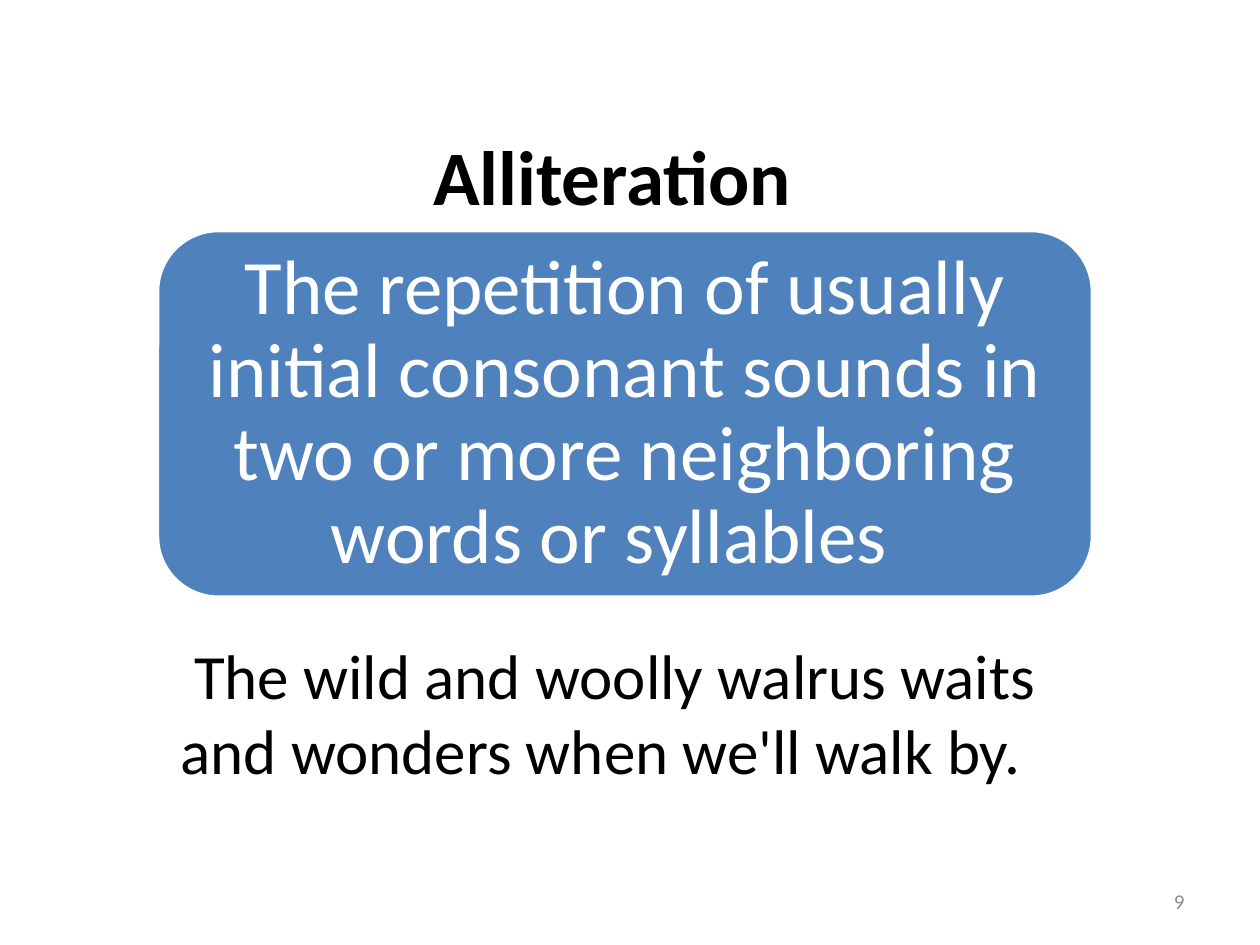
from pptx import Presentation
from pptx.dml.color import RGBColor
from pptx.enum.shapes import MSO_SHAPE
from pptx.enum.text import MSO_ANCHOR, PP_ALIGN
from pptx.util import Inches, Pt

BLACK = RGBColor(0x00, 0x00, 0x00)
WHITE = RGBColor(0xFF, 0xFF, 0xFF)
BLUE = RGBColor(0x4F, 0x81, 0xBD)
GRAY = RGBColor(0x8C, 0x8C, 0x8C)


class SlideBuilder:
    """Holds the style and the current slide."""

    font_name = "Calibri"

    def __init__(self, slide):
        self.slide = slide

    def add_runs(self, shape, runs, color, align, anchor, bold=False):
        """Fill a shape with one paragraph of (text, size) runs."""
        frame = shape.text_frame
        frame.word_wrap = True
        frame.vertical_anchor = anchor
        paragraph = frame.paragraphs[0]
        paragraph.alignment = align
        for text, size in runs:
            run = paragraph.add_run()
            run.text = text
            run.font.name = self.font_name
            run.font.size = Pt(size)
            run.font.bold = bold
            run.font.color.rgb = color
        return paragraph

    def text(self, left, top, width, height, text, size, color=BLACK,
             align=PP_ALIGN.CENTER, anchor=MSO_ANCHOR.MIDDLE, bold=False):
        box = self.slide.shapes.add_textbox(
            Inches(left), Inches(top), Inches(width), Inches(height))
        self.add_runs(box, [(text, size)], color, align, anchor, bold)

    def panel(self, left, top, width, height, runs):
        shape = self.slide.shapes.add_shape(
            MSO_SHAPE.ROUNDED_RECTANGLE,
            Inches(left), Inches(top), Inches(width), Inches(height))
        shape.shadow.inherit = False
        shape.fill.solid()
        shape.fill.fore_color.rgb = BLUE
        shape.line.color.rgb = WHITE
        shape.line.width = Pt(2)
        frame = shape.text_frame
        # The rounded corners already inset the text a little
        frame.margin_left = frame.margin_right = Inches(0.04)
        frame.margin_top = frame.margin_bottom = Inches(0.04)
        paragraph = self.add_runs(shape, runs, WHITE, PP_ALIGN.CENTER, MSO_ANCHOR.MIDDLE)
        paragraph.line_spacing = 0.9


def main():
    presentation = Presentation()
    presentation.slide_width = Inches(10)
    presentation.slide_height = Inches(7.5)
    builder = SlideBuilder(presentation.slides.add_slide(presentation.slide_layouts[6]))

    # Title
    builder.text(0.75, 0.58, 8.5, 1.61, "Alliteration  ", 44, bold=True)

    # Definition
    builder.panel(1.25, 1.83, 7.42, 2.91, [
        ("The repetition of usually initial consonant sounds in two or more "
         "neighboring words or syllables ", 44),
        (" ", 36),
    ])

    # Example
    builder.text(1.17, 5, 7.42, 1.31,
                 "The wild and woolly walrus waits and wonders when we'll walk by.  ",
                 36, anchor=MSO_ANCHOR.TOP)

    # Slide number
    builder.text(7.17, 6.95, 2.33, 0.4, "9", 12, color=GRAY, align=PP_ALIGN.RIGHT)

    presentation.save("out.pptx")


if __name__ == "__main__":
    main()
